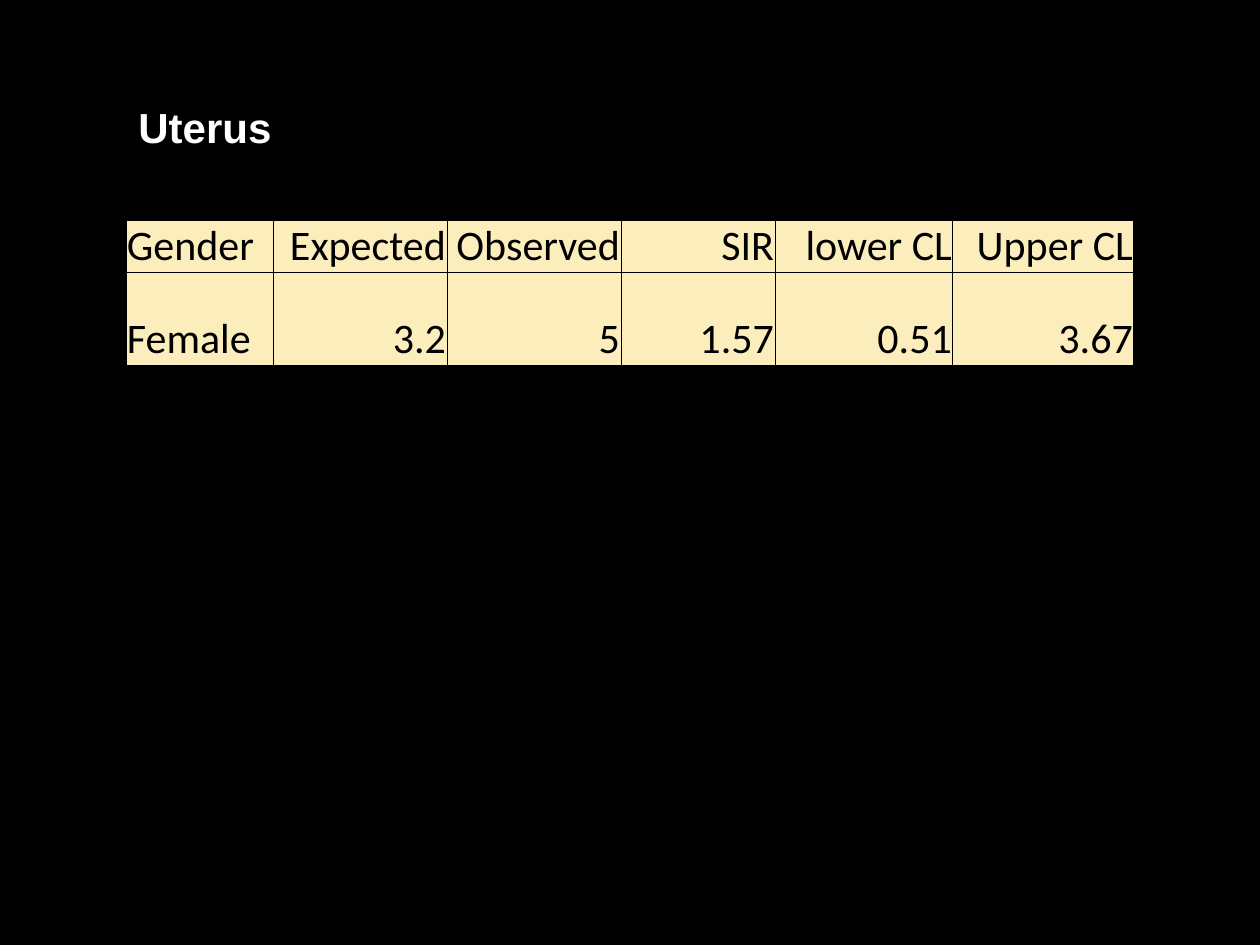
from lxml.etree import SubElement
from pptx import Presentation
from pptx.dml.color import RGBColor
from pptx.enum.text import MSO_ANCHOR as Anchor, PP_ALIGN as Align
from pptx.oxml.ns import qn
from pptx.util import Pt

PX = 914400 // 126
BLACK, WHITE, CREAM = "000000", "FFFFFF", "FCEEBC"

TITLE = "Uterus"
ROWS = [
    ("Gender", "Expected", "Observed", "SIR", "lower CL", "Upper CL"),
    ("Female", "3.2", "5", "1.57", "0.51", "3.67"),
]
COLUMN_WIDTHS = [147, 174, 174, 154, 178, 181]
ROW_HEIGHTS = [52, 93]


def px(length):
    return length * PX


def color(code):
    return RGBColor.from_string(code)


def style_text(paragraph, name, code, bold=False):
    font = paragraph.runs[0].font
    font.name, font.size, font.bold = name, Pt(24), bold
    font.color.rgb = color(code)


def add_borders(cell):
    """Draw thin black lines on all four sides; call before filling the cell."""
    properties = cell._tc.get_or_add_tcPr()
    for side in ("a:lnL", "a:lnR", "a:lnT", "a:lnB"):
        line = SubElement(properties, qn(side), w=str(Pt(0.5)))
        fill = SubElement(line, qn("a:solidFill"))
        SubElement(fill, qn("a:srgbClr"), val=BLACK)


def add_table(slide):
    frame = slide.shapes.add_table(
        len(ROWS), len(COLUMN_WIDTHS), px(126), px(220),
        px(sum(COLUMN_WIDTHS)), px(sum(ROW_HEIGHTS)))
    table = frame.table
    for column, width in zip(table.columns, COLUMN_WIDTHS):
        column.width = px(width)
    for row, height, values in zip(table.rows, ROW_HEIGHTS, ROWS):
        row.height = px(height)
        for index, (cell, value) in enumerate(zip(row.cells, values)):
            cell.margin_left = cell.margin_right = cell.margin_top = px(1)
            cell.margin_bottom = 0
            cell.vertical_anchor = Anchor.BOTTOM
            add_borders(cell)
            cell.fill.solid()
            cell.fill.fore_color.rgb = color(CREAM)
            paragraph = cell.text_frame.paragraphs[0]
            paragraph.text = value
            paragraph.alignment = Align.RIGHT if index else Align.LEFT
            style_text(paragraph, "Calibri", BLACK)


def add_title(slide):
    box = slide.shapes.add_textbox(px(126), px(95), px(388), px(64))
    box.text_frame.word_wrap = True
    box.text_frame.text = TITLE
    style_text(box.text_frame.paragraphs[0], "Arial", WHITE, bold=True)


def main():
    deck = Presentation()
    deck.slide_width, deck.slide_height = px(1260), px(945)
    slide = deck.slides.add_slide(deck.slide_layouts[6])
    slide.background.fill.solid()
    slide.background.fill.fore_color.rgb = color(BLACK)
    add_table(slide)
    add_title(slide)
    deck.save("out.pptx")


if __name__ == "__main__":
    main()
